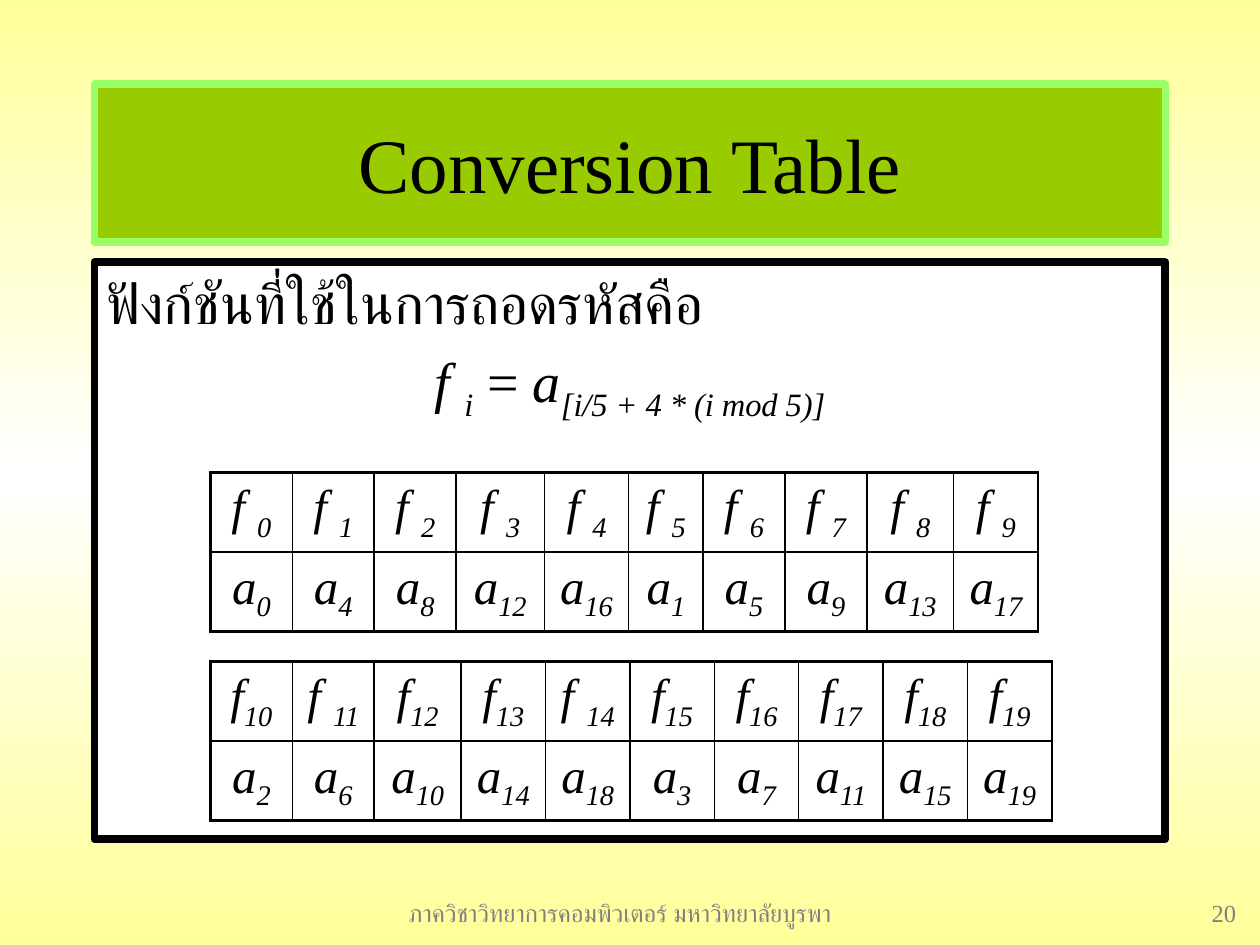
from copy import deepcopy
from dataclasses import dataclass

from pptx import Presentation
from pptx import util as u
from pptx.dml.color import RGBColor
from pptx.enum import shapes, text
from pptx.oxml import ns
from pptx.oxml.xmlchemy import OxmlElement

FONT = "Times New Roman"
BLACK = "000000"
SUBSCRIPT = -25000
THIN, THICK = 1, 2.25
ROW_HEIGHT = 0.59


@dataclass
class Span:
    text: str
    italic: bool = True
    lowered: bool = False


@dataclass
class ConversionTable:
    top: float
    first: int
    widths: list[float]


TABLES = [
    ConversionTable(3.75, 0, [0.65, 0.65, 0.65, 0.7, 0.67, 0.59, 0.65, 0.65, 0.69, 0.67]),
    ConversionTable(5.25, 10, [0.65, 0.65, 0.69] + [0.67] * 7),
]
SPACED = {*range(10), 11, 14}  # indices written with a gap after the f


def color(value: str) -> RGBColor:
    return RGBColor.from_string(value)


def write(para, spans: list[Span], size: float, align, ink: str = BLACK,
          before: float = 0) -> None:
    """Fill a paragraph with spans that share one font."""
    para.alignment = align
    para.space_before = u.Pt(before)
    font = para.font
    font.name, font.size = FONT, u.Pt(size)
    font.color.rgb = color(ink)
    for item in spans:
        span = para.add_run()
        span.text = item.text
        span.font.name, span.font.size = FONT, u.Pt(size)
        span.font.color.rgb = color(ink)
        span.font.italic = item.italic
        # Thai letters take the complex-script font
        complex_font = OxmlElement("a:cs")
        complex_font.set("typeface", FONT)
        span.font._element.append(complex_font)
        if item.lowered:
            span.font._element.set("baseline", str(SUBSCRIPT))


def paint(box, fill: str, line: str) -> None:
    box.fill.solid()
    box.fill.fore_color.rgb = color(fill)
    box.line.color.rgb = color(line)
    box.line.width = u.Pt(4.5)


def place(box, left: float, top: float, width: float, height: float) -> None:
    box.left, box.top = u.Inches(left), u.Inches(top)
    box.width, box.height = u.Inches(width), u.Inches(height)


def add_footer(page, left: float, width: float, words: str, align) -> None:
    box = page.shapes.add_textbox(
        u.Inches(left), u.Inches(7.08), u.Inches(width), u.Inches(0.33))
    box.text_frame.word_wrap = True
    write(box.text_frame.paragraphs[0], [Span(words, italic=False)], 14, align, "808080")


def set_border(cell, side: str, width: float) -> None:
    line = OxmlElement(f"a:ln{side}")
    line.set("w", str(u.Pt(width)))
    fill = OxmlElement("a:solidFill")
    ink = OxmlElement("a:srgbClr")
    ink.set("val", BLACK)
    fill.append(ink)
    line.append(fill)
    cell._tc.get_or_add_tcPr().append(line)


def add_conversion_table(page, spec_row: ConversionTable) -> None:
    widths = spec_row.widths
    table = page.shapes.add_table(
        2, len(widths), u.Inches(1.67), u.Inches(spec_row.top),
        u.Inches(sum(widths)), u.Inches(2 * ROW_HEIGHT)).table
    table.first_row = table.horz_banding = False
    for row in table.rows:
        row.height = u.Inches(ROW_HEIGHT)
    for column, width in enumerate(widths):
        table.columns[column].width = u.Inches(width)
        i = spec_row.first + column
        pairs = [("f " if i in SPACED else "f", i), ("a", i // 5 + 4 * (i % 5))]
        for row, (letter, index) in enumerate(pairs):
            cell = table.cell(row, column)
            cell.vertical_anchor = text.MSO_ANCHOR.MIDDLE
            set_border(cell, "L", THICK if column == 0 else THIN)
            set_border(cell, "R", THIN)
            set_border(cell, "T", THICK if row == 0 else THIN)
            set_border(cell, "B", THICK if row == 1 else THIN)
            cell.fill.background()
            write(cell.text_frame.paragraphs[0],
                  [Span(letter), Span(str(index), lowered=True)],
                  28, text.PP_ALIGN.CENTER, before=5.6)


def set_background(page) -> None:
    """Vertical gradient, yellow at both ends and white in the middle."""
    fill = page.background.fill
    fill.gradient()
    fill.gradient_angle = 90
    stop_list = page._element.find(".//" + ns.qn("a:gsLst"))
    stop_list.append(deepcopy(stop_list[-1]))
    for stop, position, shade in zip(
            fill.gradient_stops, (0, 0.5, 1), ("FFFF99", "FFFFFF", "FFFF99")):
        stop.position = position
        stop.color.rgb = color(shade)


def main() -> None:
    deck = Presentation()
    deck.slide_width, deck.slide_height = u.Inches(10), u.Inches(7.5)
    page = deck.slides.add_slide(deck.slide_layouts[5])
    set_background(page)

    # Footer and page number
    add_footer(page, 2.42, 5, "ภาควิชาวิทยาการคอมพิวเตอร์ มหาวิทยาลัยบูรพา",
               text.PP_ALIGN.CENTER)
    add_footer(page, 7.83, 2.08, "20", text.PP_ALIGN.RIGHT)

    # Title
    title = page.shapes.title
    place(title, 0.75, 0.67, 8.5, 1.25)
    paint(title, "99CC00", "99FF66")
    title.text_frame.vertical_anchor = text.MSO_ANCHOR.MIDDLE
    write(title.text_frame.paragraphs[0], [Span("Conversion Table", italic=False)],
          44, text.PP_ALIGN.CENTER)

    # Body with the decoding formula
    body = page.shapes.add_shape(
        shapes.MSO_SHAPE.RECTANGLE, u.Inches(0.75), u.Inches(2.08),
        u.Inches(8.5), u.Inches(4.58))
    body.shadow.inherit = False
    paint(body, "FFFFFF", BLACK)
    frame = body.text_frame
    frame.word_wrap = True
    frame.vertical_anchor = text.MSO_ANCHOR.TOP
    write(frame.paragraphs[0], [Span("ฟังก์ชันที่ใช้ในการถอดรหัสคือ", italic=False)],
          32, text.PP_ALIGN.LEFT, before=6.4)
    formula = [Span("f "), Span("i", lowered=True), Span(" = ", italic=False),
               Span("a"), Span("[i/5 + 4 * (i mod 5)]", lowered=True)]
    write(frame.add_paragraph(), formula, 32, text.PP_ALIGN.CENTER, before=6.4)

    # Conversion tables
    for conversion in TABLES:
        add_conversion_table(page, conversion)

    deck.save("out.pptx")


if __name__ == "__main__":
    main()
